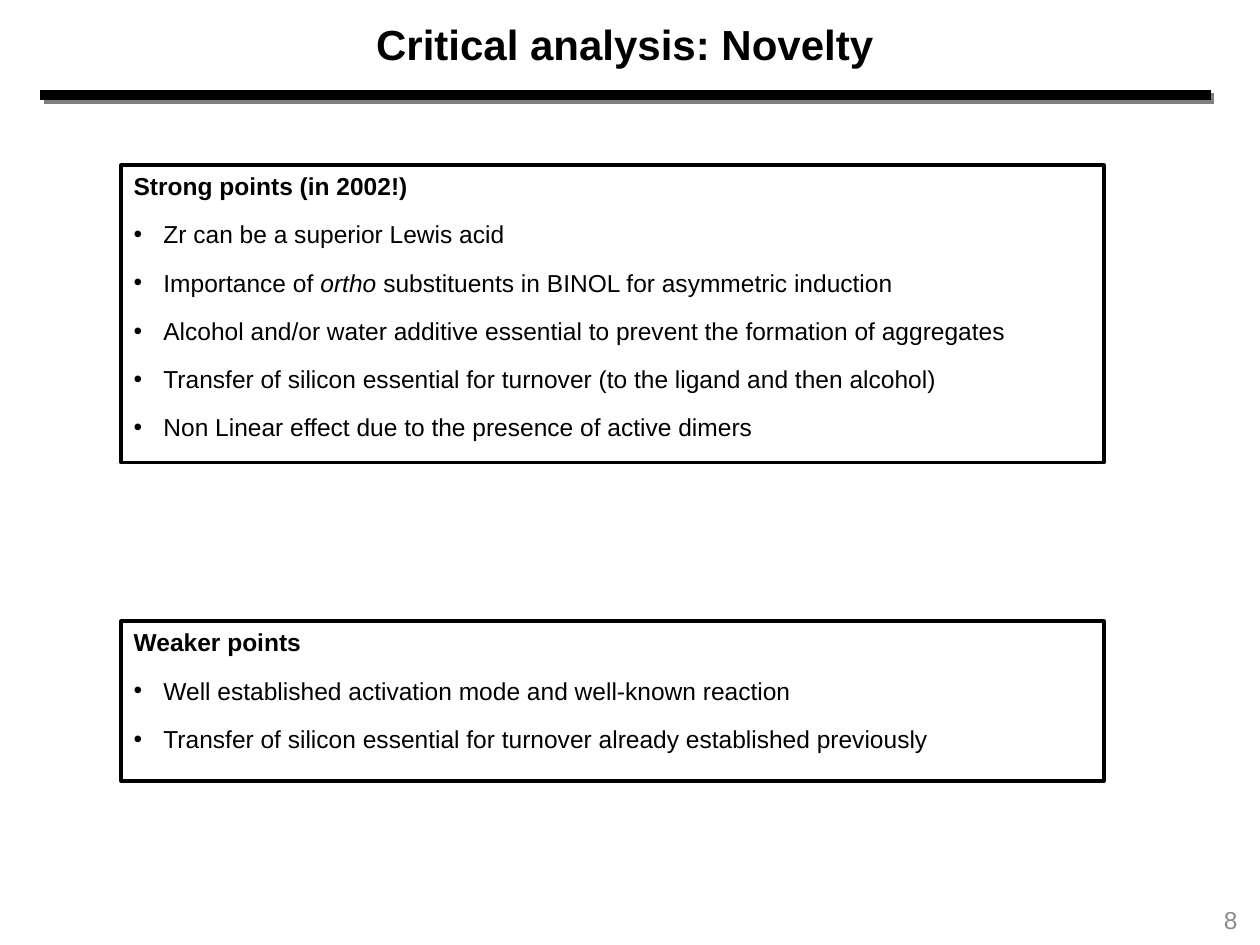
from lxml.etree import SubElement as Sub
from pptx import Presentation as Deck
from pptx.dml.color import RGBColor as Rgb
from pptx.enum.shapes import MSO_CONNECTOR as Conn, MSO_SHAPE as Shape
from pptx.enum.text import MSO_ANCHOR as Anchor, PP_ALIGN as Align
from pptx.oxml.ns import qn
from pptx.util import Pt

BLACK = Rgb(0, 0, 0)
GREY = Rgb(0x8C, 0x8C, 0x8C)
SHADE = "808080"

# Each point is a list of (text, italic) runs
STRONG = [
    [("Zr can be a superior Lewis acid", False)],
    [("Importance of ", False), ("ortho ", True),
     ("substituents in BINOL for asymmetric induction", False)],
    [("Alcohol and/or water additive essential to prevent "
      "the formation of aggregates", False)],
    [("Transfer of silicon essential for turnover "
      "(to the ligand and then alcohol)", False)],
    [("Non Linear effect due to the presence of active dimers", False)],
]
WEAK = [
    [("Well established activation mode and well-known reaction", False)],
    [("Transfer of silicon essential for turnover "
      "already established previously", False)],
]


def put(para, text, size=14, color=BLACK, bold=False, italic=False,
        align=Align.JUSTIFY):
    """Add one formatted run to a paragraph."""
    para.alignment = align
    run = para.add_run()
    run.text = text
    font = run.font
    font.name, font.size = "Arial", Pt(size)
    font.bold, font.italic = bold, italic
    font.color.rgb = color


def bullet(para, indent=17):
    """Give a paragraph a hanging round bullet."""
    props = para._p.get_or_add_pPr()
    props.set("marL", str(Pt(indent)))
    props.set("indent", str(-Pt(indent)))
    Sub(props, qn("a:buFont"), typeface="Arial")
    Sub(props, qn("a:buChar"), char="•")


def title(slide, text):
    head = slide.shapes.title
    head.left, head.top, head.width, head.height = (
        Pt(33), Pt(3.6), Pt(648), Pt(43.2))
    frame = head.text_frame
    frame.vertical_anchor = Anchor.MIDDLE
    put(frame.paragraphs[0], text, size=24, bold=True, align=Align.CENTER)


def rule(slide, left, right, y):
    """Draw the thick line with its hard offset shadow."""
    line = slide.shapes.add_connector(
        Conn.STRAIGHT, Pt(left), Pt(y), Pt(right), Pt(y))
    line.line.color.rgb = BLACK
    line.line.width = Pt(6)
    fx = Sub(line._element.spPr, qn("a:effectLst"))
    shade = Sub(fx, qn("a:outerShdw"), dist=str(Pt(2.8)), dir="2700000",
                algn="ctr", rotWithShape="0")
    Sub(shade, qn("a:srgbClr"), val=SHADE)


def panel(slide, top, height, head, points):
    """Draw a framed box with a bold heading and bulleted points."""
    box = slide.shapes.add_shape(
        Shape.RECTANGLE, Pt(69.3), Pt(top), Pt(561.5), Pt(height))
    box.shadow.inherit = False
    box.fill.background()
    box.line.color.rgb = BLACK
    box.line.width = Pt(2)
    frame = box.text_frame
    frame.word_wrap = True
    frame.vertical_anchor = Anchor.TOP
    put(frame.paragraphs[0], head, bold=True)
    for point in points:
        para = frame.add_paragraph()
        para.space_before = Pt(10.75)
        bullet(para)
        for text, italic in point:
            put(para, text, italic=italic)


def number(slide, text):
    box = slide.shapes.add_textbox(Pt(546.5), Pt(511.2), Pt(167.8), Pt(28.8))
    frame = box.text_frame
    frame.word_wrap = True
    frame.vertical_anchor = Anchor.MIDDLE
    put(frame.paragraphs[0], text, color=GREY, align=Align.RIGHT)


def main():
    deck = Deck()
    deck.slide_width, deck.slide_height = Pt(720), Pt(540)
    slide = deck.slides.add_slide(deck.slide_layouts[5])

    # Header
    title(slide, "Critical analysis: Novelty")
    rule(slide, 23, 692, 54.2)

    # Assessment boxes
    panel(slide, 94.3, 170, "Strong points (in 2002!)", STRONG)
    panel(slide, 355, 91.4, "Weaker points", WEAK)

    # Footer
    number(slide, "8")
    deck.save("out.pptx")


if __name__ == "__main__":
    main()
